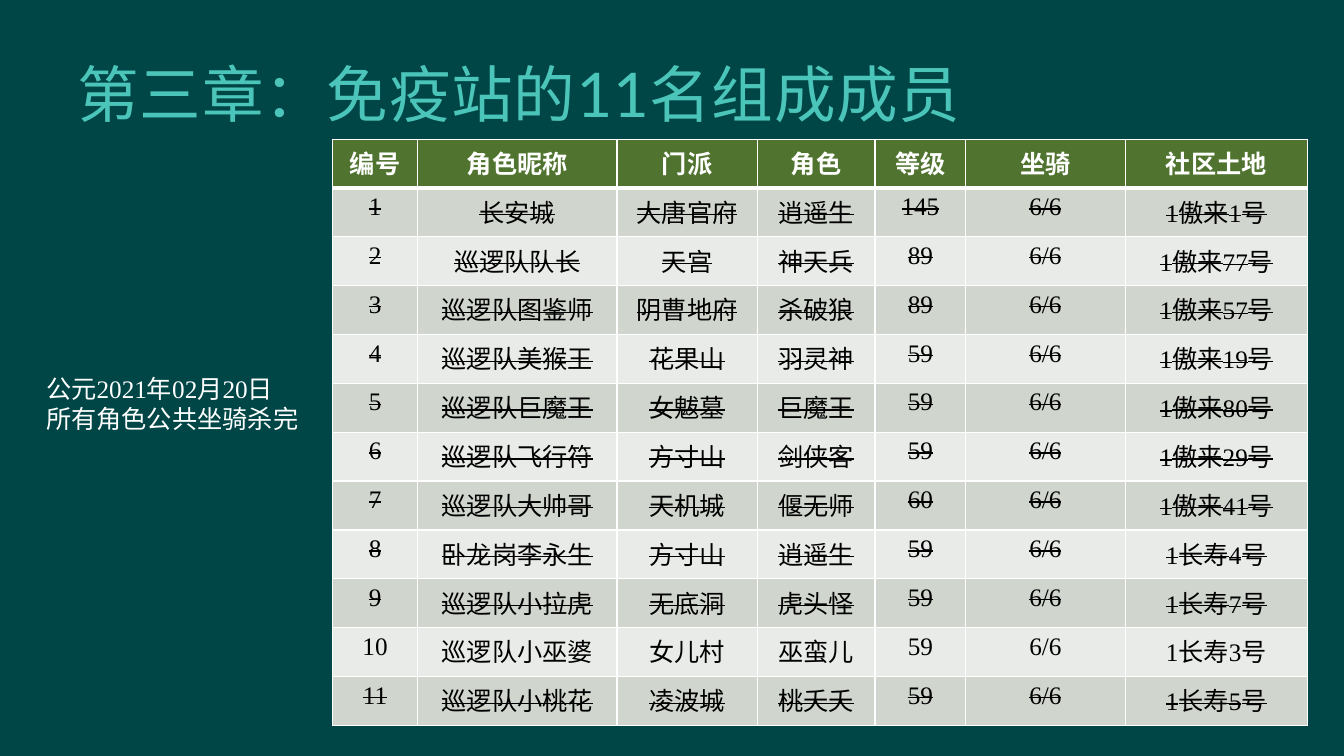
from lxml import etree
from pptx import Presentation
from pptx import util as u
from pptx.dml.color import RGBColor
from pptx.enum import text
from pptx.oxml import ns

HEADINGS = ["编号", "角色昵称", "门派", "角色", "等级", "坐骑", "社区土地"]
COLUMN_WIDTHS = [84, 198, 139, 117, 90, 158, 181]
MOUNTS = "6/6"
ACTIVE_NUMBER = 10
MEMBERS = [
    ("长安城", "大唐官府", "逍遥生", 145, "1傲来1号"),
    ("巡逻队队长", "天宫", "神天兵", 89, "1傲来77号"),
    ("巡逻队图鉴师", "阴曹地府", "杀破狼", 89, "1傲来57号"),
    ("巡逻队美猴王", "花果山", "羽灵神", 59, "1傲来19号"),
    ("巡逻队巨魔王", "女魃墓", "巨魔王", 59, "1傲来80号"),
    ("巡逻队飞行符", "方寸山", "剑侠客", 59, "1傲来29号"),
    ("巡逻队大帅哥", "天机城", "偃无师", 60, "1傲来41号"),
    ("卧龙岗李永生", "方寸山", "逍遥生", 59, "1长寿4号"),
    ("巡逻队小拉虎", "无底洞", "虎头怪", 59, "1长寿7号"),
    ("巡逻队小巫婆", "女儿村", "巫蛮儿", 59, "1长寿3号"),
    ("巡逻队小桃花", "凌波城", "桃夭夭", 59, "1长寿5号"),
]


def color(hex_code):
    return RGBColor.from_string(hex_code)


def px(length):
    return u.Emu(length * 9144)


class RosterSlide:
    """Holds the deck style and the current slide, and adds each kind of element."""

    BACKGROUND, TITLE, WHITE, BLACK = "004646", "4BC5B9", "FFFFFF", "000000"
    HEADER, BANDS = "50742F", ("D0D6CD", "E9EBE8")
    TITLE_FONT, BODY_FONT = "Lato", "Times New Roman"

    def __init__(self, deck):
        self.slide = deck.slides.add_slide(deck.slide_layouts[5])
        self.slide.background.fill.solid()
        self.slide.background.fill.fore_color.rgb = color(self.BACKGROUND)

    def style(self, paragraph, size, face, hex_code, bold=False, **attributes):
        for run in paragraph.runs:
            run.font.size = u.Pt(size)
            run.font.name = face
            run.font.bold = bold
            run.font.color.rgb = color(hex_code)
            for key, value in attributes.items():
                run.font._element.set(key, value)

    def title(self, words, left, top, width, height):
        heading = self.slide.shapes.title
        heading.left, heading.top = px(left), px(top)
        heading.width, heading.height = px(width), px(height)
        frame = heading.text_frame
        frame.text = words
        frame.vertical_anchor = text.MSO_ANCHOR.MIDDLE
        frame.paragraphs[0].alignment = text.PP_ALIGN.LEFT
        self.style(frame.paragraphs[0], 44, self.TITLE_FONT, self.TITLE, spc="50")

    def note(self, words, left, top, width, height):
        box = self.slide.shapes.add_textbox(px(left), px(top), px(width), px(height))
        frame = box.text_frame
        frame.word_wrap = True
        frame.text = words
        for paragraph in frame.paragraphs:
            self.style(paragraph, 18, self.BODY_FONT, self.WHITE)

    def border(self, cell, side, points):
        properties = cell._tc.get_or_add_tcPr()
        line = etree.SubElement(properties, ns.qn(f"a:ln{side}"), w=str(u.Pt(points)))
        fill = etree.SubElement(line, ns.qn("a:solidFill"))
        etree.SubElement(fill, ns.qn("a:srgbClr"), val=self.WHITE)

    def cell(self, cell, words, row, struck):
        is_header = row == 0
        cell.text = words
        paragraph = cell.text_frame.paragraphs[0]
        paragraph.alignment = text.PP_ALIGN.CENTER
        self.style(paragraph, 18, self.BODY_FONT,
                   self.WHITE if is_header else self.BLACK, is_header,
                   strike="sngStrike" if struck else "noStrike")
        for side in "LRTB":
            at_header_rule = (row, side) in ((0, "B"), (1, "T"))
            self.border(cell, side, 3 if at_header_rule else 1)
        cell.fill.solid()
        cell.fill.fore_color.rgb = color(self.HEADER if is_header else self.BANDS[(row - 1) % 2])

    def roster(self, rows, widths, struck_rows, left, top, height):
        roster = self.slide.shapes.add_table(
            len(rows), len(widths), px(left), px(top), px(sum(widths)), px(height)).table
        roster.horz_banding = False
        for column, width in zip(roster.columns, widths):
            column.width = px(width)
        for row, entries in enumerate(rows):
            roster.rows[row].height = px(height) // len(rows)
            for column, words in enumerate(entries):
                self.cell(roster.cell(row, column), words, row, row in struck_rows)


def main():
    deck = Presentation()
    deck.slide_width, deck.slide_height = u.Inches(13.33), u.Inches(7.5)
    chapter = RosterSlide(deck)
    chapter.title("第三章：免疫站的11名组成成员", 67, 30, 1134, 125)
    rows = [HEADINGS]
    for number, (nickname, school, role, level, land) in enumerate(MEMBERS, 1):
        rows.append([str(number), nickname, school, role, str(level), MOUNTS, land])
    struck_rows = set(range(1, len(rows))) - {ACTIVE_NUMBER}
    chapter.roster(rows, COLUMN_WIDTHS, struck_rows, 330, 138, 582)
    chapter.note("公元2021年02月20日\n所有角色公共坐骑杀完", 36, 365, 273, 71)
    deck.save("out.pptx")


if __name__ == "__main__":
    main()
